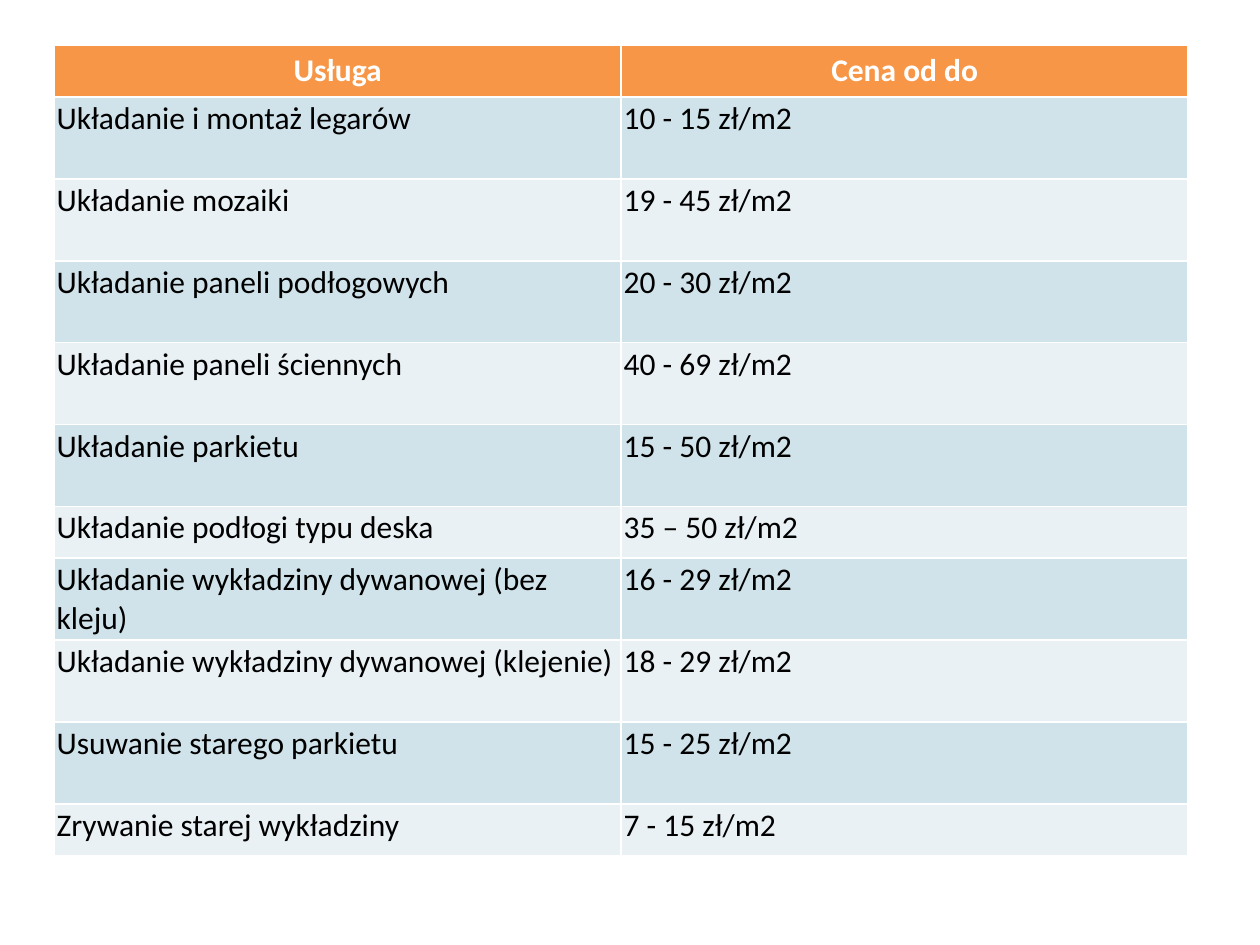
import pptx
import pptx.util
import pptx.dml.color
import pptx.enum.text

Inches = pptx.util.Inches
HEAD = ("Usługa", "Cena od do")
LOW, TALL = 0.41, 0.65
PRICES = [
    ("Układanie i montaż legarów", "10 - 15 zł/m2", TALL),
    ("Układanie mozaiki", "19 - 45 zł/m2", TALL),
    ("Układanie paneli podłogowych", "20 - 30 zł/m2", TALL),
    ("Układanie paneli ściennych", "40 - 69 zł/m2", TALL),
    ("Układanie parkietu", "15 - 50 zł/m2", TALL),
    ("Układanie podłogi typu deska", "35 – 50 zł/m2", LOW),
    ("Układanie wykładziny dywanowej (bez kleju)", "16 - 29 zł/m2", TALL),
    ("Układanie wykładziny dywanowej (klejenie)", "18 - 29 zł/m2", TALL),
    ("Usuwanie starego parkietu", "15 - 25 zł/m2", TALL),
    ("Zrywanie starej wykładziny", "7 - 15 zł/m2", LOW),
]
ORANGE, WHITE, BLACK = "F79646", "FFFFFF", "000000"
BANDS = ("D0E3EA", "E9F1F5")


def paint(target, color):
    target.rgb = pptx.dml.color.RGBColor.from_string(color)


def write(cell, text, fill, color, bold=False):
    cell.text = text
    cell.fill.solid()
    paint(cell.fill.fore_color, fill)
    font = cell.text_frame.paragraphs[0].font
    font.name, font.size, font.bold = "Calibri", pptx.util.Pt(18), bold
    paint(font.color, color)


def main():
    deck = pptx.Presentation()
    deck.slide_width, deck.slide_height = Inches(10), Inches(7.5)
    slide = deck.slides.add_slide(deck.slide_layouts[6])
    total = LOW + sum(high for _, _, high in PRICES)
    table = slide.shapes.add_table(
        len(PRICES) + 1, len(HEAD),
        Inches(0.43), Inches(0.36), Inches(9), Inches(total)).table

    table.rows[0].height = Inches(LOW)
    for col, text in enumerate(HEAD):
        cell = table.cell(0, col)
        write(cell, text, ORANGE, WHITE, bold=True)
        cell.text_frame.paragraphs[0].alignment = pptx.enum.text.PP_ALIGN.CENTER

    for row, (job, price, high) in enumerate(PRICES, 1):
        table.rows[row].height = Inches(high)
        for col, text in enumerate((job, price)):
            cell = table.cell(row, col)
            write(cell, text, BANDS[(row - 1) % 2], BLACK)
            cell.margin_left = cell.margin_right = Inches(0.02)
            cell.margin_top = cell.margin_bottom = Inches(0.02)

    deck.save("out.pptx")


if __name__ == "__main__":
    main()
